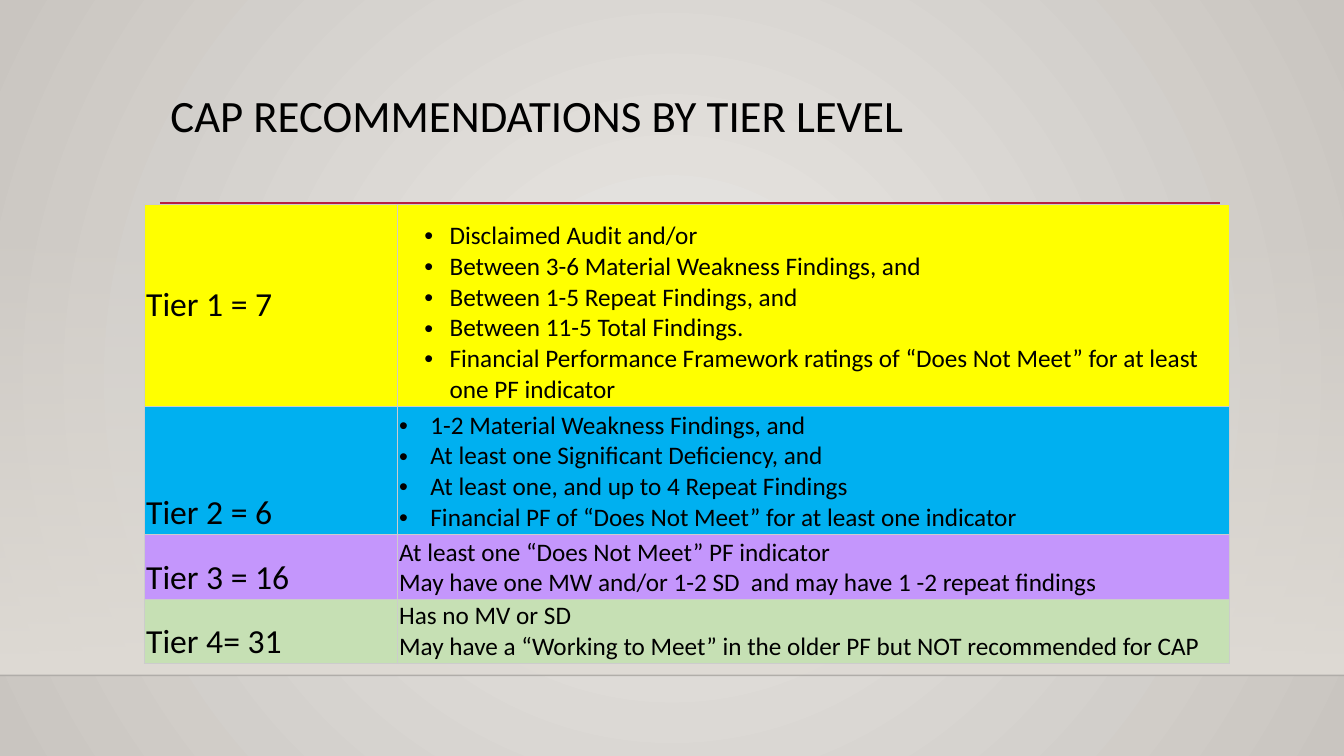
from dataclasses import dataclass

from pptx import Presentation
from pptx import util as u
from pptx.dml.color import RGBColor
from pptx.enum import shapes, text
from pptx.oxml import ns
from pptx.oxml.xmlchemy import OxmlElement

PX = 9144


@dataclass(frozen=True)
class Theme:
    font: str = "Calibri"
    ink: str = "000000"
    glow: str = "EBE9E6"
    edge: str = "C9C5C0"
    wall: str = "DFDBD5"
    rule: str = "B71E42"
    floor: str = "000001"
    grid: str = "CCCCCC"
    title_size: int = 32
    tier_size: int = 24
    criteria_size: int = 18


THEME = Theme()

TIERS = [
    ("Tier 1 = 7", "FFFF00", 200, text.MSO_ANCHOR.MIDDLE, (1, 50, 25), [
        "Disclaimed Audit and/or",
        "Between 3-6 Material Weakness Findings, and",
        "Between 1-5 Repeat Findings, and",
        "Between 11-5 Total Findings.",
        "Financial Performance Framework ratings of “Does Not Meet” for at least one PF indicator",
    ]),
    ("Tier 2 = 6", "00B0F0", 127, text.MSO_ANCHOR.BOTTOM, (0, 31, 31), [
        "1-2 Material Weakness Findings, and",
        "At least one Significant Deficiency, and",
        "At least one, and up to 4 Repeat Findings",
        "Financial PF of “Does Not Meet” for at least one indicator",
    ]),
    ("Tier 3 = 16", "C496FC", 65, text.MSO_ANCHOR.BOTTOM, None, [
        "At least one “Does Not Meet” PF indicator",
        "May have one MW and/or 1-2 SD  and may have 1 -2 repeat findings",
    ]),
    ("Tier 4= 31", "C6E0B4", 63, text.MSO_ANCHOR.BOTTOM, None, [
        "Has no MV or SD",
        "May have a “Working to Meet” in the older PF but NOT recommended for CAP",
    ]),
]


def px(length):
    return u.Emu(length * PX)


def rgb(color):
    return RGBColor.from_string(color)


def apply(target, **values):
    for name, value in values.items():
        setattr(target, name, value)


def add_xml(parent, tag, **attributes):
    element = OxmlElement(tag)
    for name, value in attributes.items():
        element.set(name, str(value))
    parent.append(element)
    return element


def set_opacity(element, percent):
    color = element.find(".//" + ns.qn("a:srgbClr"))
    add_xml(color, "a:alpha", val=percent * 1000)


def set_font(paragraph, size):
    apply(paragraph.font, name=THEME.font, size=u.Pt(size))
    paragraph.font.color.rgb = rgb(THEME.ink)


def set_gradient(fill, *colors):
    fill.gradient()
    for stop, color in zip(fill.gradient_stops, colors):
        stop.color.rgb = rgb(color)


def add_rule(slide, left, top, width, color, weight):
    rule = slide.shapes.add_connector(
        shapes.MSO_CONNECTOR.STRAIGHT, px(left), px(top), px(left + width), px(top))
    rule.line.color.rgb = rgb(color)
    rule.line.width = u.Pt(weight)
    add_xml(rule.element.spPr, "a:effectLst")
    return rule


def add_backdrop(slide, left, top, width, height):
    set_gradient(slide.background.fill, THEME.glow, THEME.edge)
    gradient = slide.element.find(".//" + ns.qn("a:gradFill"))
    gradient.remove(gradient.find(ns.qn("a:lin")))
    circle = add_xml(gradient, "a:path", path="circle")
    add_xml(circle, "a:fillToRect", l=50000, t=50000, r=50000, b=50000)

    wall = slide.shapes.add_shape(
        shapes.MSO_SHAPE.RECTANGLE, px(left), px(top), px(width), px(height))
    wall.shadow.inherit = False
    wall.line.fill.background()
    set_gradient(wall.fill, THEME.wall, THEME.wall)
    wall.fill.gradient_angle = 270
    set_opacity(wall.element.spPr, 0)

    floor = add_rule(slide, left, top + height, width, THEME.floor, 1)
    set_opacity(floor.element.spPr, 20)


def add_heading(slide, left, top, width, height):
    heading = slide.shapes.title
    apply(heading, left=px(left), top=px(top), width=px(width), height=px(height))
    frame = heading.text_frame
    frame.text = "CAP RECOMMENDATIONS BY TIER LEVEL"
    apply(frame, word_wrap=True, auto_size=text.MSO_AUTO_SIZE.NONE,
          vertical_anchor=text.MSO_ANCHOR.TOP, margin_left=px(10),
          margin_right=px(10), margin_top=px(5), margin_bottom=px(5))
    apply(frame.paragraphs[0], alignment=text.PP_ALIGN.LEFT, line_spacing=0.9)
    set_font(frame.paragraphs[0], THEME.title_size)
    add_rule(slide, left, top + 114, width + 1, THEME.rule, 2.5)


def add_bullet(paragraph, level, indent, hanging):
    paragraph.level = level
    properties = paragraph._p.get_or_add_pPr()
    properties.set("marL", str(px(indent)))
    properties.set("indent", str(px(-hanging)))
    add_xml(add_xml(properties, "a:buClr"), "a:srgbClr", val=THEME.ink)
    add_xml(properties, "a:buFont", typeface="Arial")
    add_xml(properties, "a:buChar", char="•")


def fill_cell(cell, lines, color, size, anchor, bullet=None):
    cell.text = "\n".join(lines)
    apply(cell, vertical_anchor=anchor, margin_left=px(2), margin_right=px(2),
          margin_top=px(1), margin_bottom=px(1))
    for paragraph in cell.text_frame.paragraphs:
        if bullet:
            add_bullet(paragraph, *bullet)
        set_font(paragraph, size)
    properties = cell._tc.get_or_add_tcPr()
    for side in ("a:lnL", "a:lnR", "a:lnT", "a:lnB"):
        border = add_xml(properties, side, w=u.Pt(0.75))
        add_xml(add_xml(border, "a:solidFill"), "a:srgbClr", val=THEME.grid)
    cell.fill.solid()
    cell.fill.fore_color.rgb = rgb(color)


def add_tier_table(slide, left, top, width, tier_width):
    height = sum(tier[2] for tier in TIERS)
    table = slide.shapes.add_table(
        len(TIERS), 2, px(left), px(top), px(width), px(height)).table
    apply(table, first_row=False, horz_banding=False)
    for column, span in zip(table.columns, (tier_width, width - tier_width)):
        column.width = px(span)
    for row, (tier, color, row_height, anchor, bullet, criteria) in zip(table.rows, TIERS):
        row.height = px(row_height)
        fill_cell(row.cells[0], [tier], color, THEME.tier_size, anchor)
        fill_cell(row.cells[1], criteria, color, THEME.criteria_size,
                  text.MSO_ANCHOR.BOTTOM, bullet)


def main():
    deck = Presentation()
    apply(deck, slide_width=px(1333), slide_height=px(750))
    slide = deck.slides.add_slide(deck.slide_layouts[5])
    add_backdrop(slide, 0, 221, 1333, 449)
    add_heading(slide, 159, 88, 1050, 115)
    add_tier_table(slide, 143, 203, 1076, 251)
    deck.save("out.pptx")


if __name__ == "__main__":
    main()
